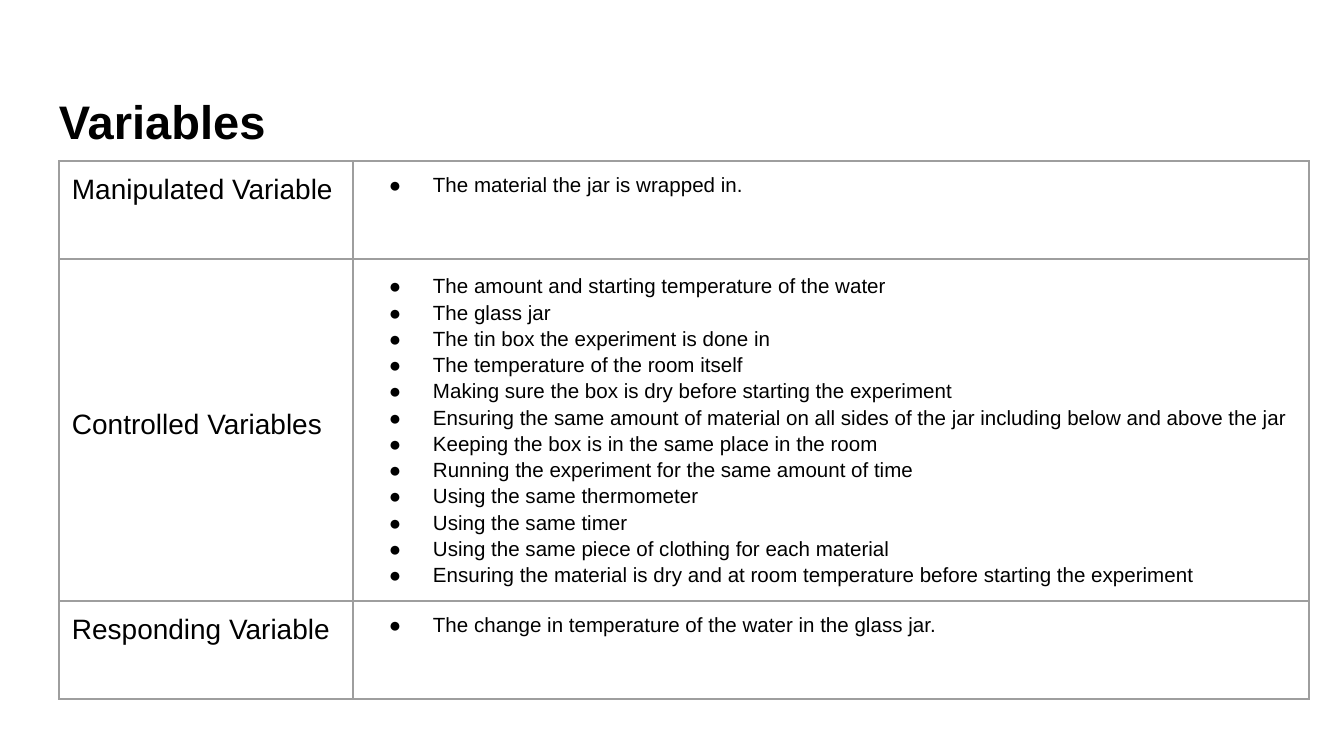
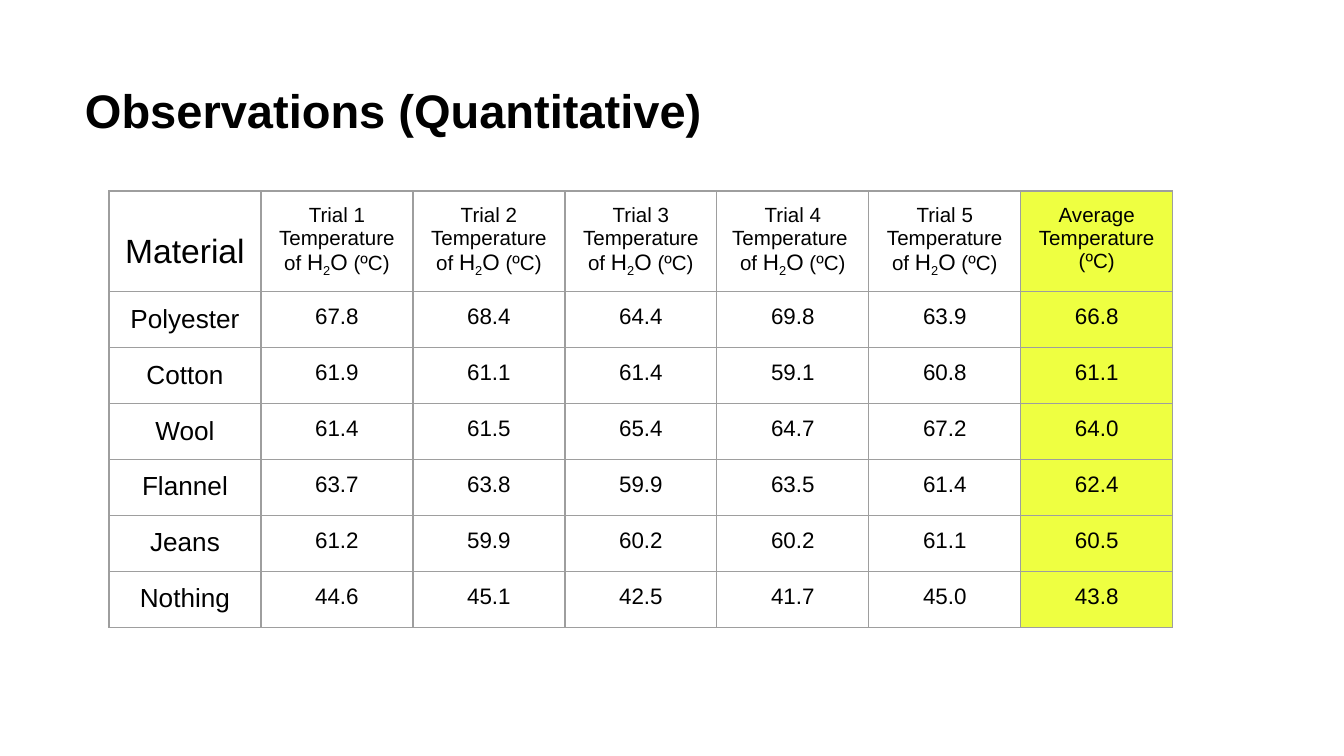
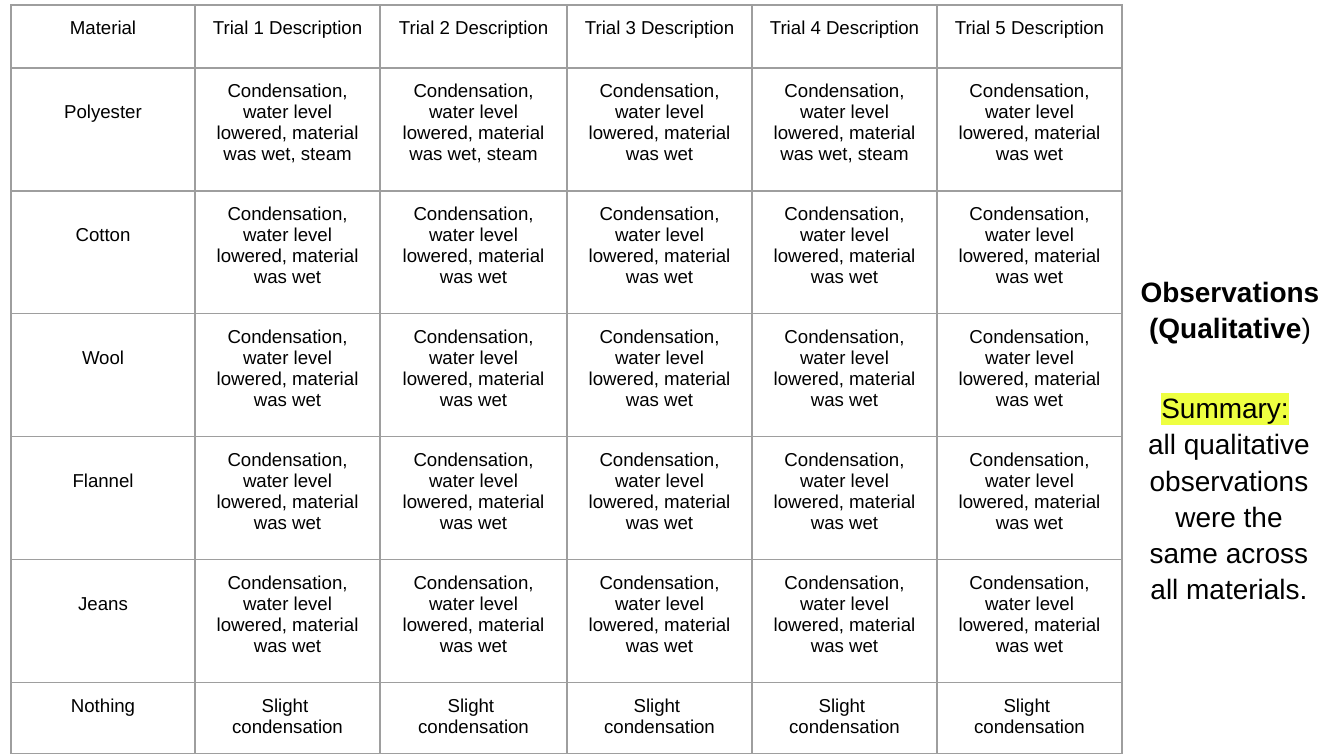
from dataclasses import dataclass
from typing import Optional, Sequence, Union

import pptx
import pptx.util
import pptx.dml.color
import pptx.enum.text
import pptx.oxml
import pptx.oxml.ns
from lxml import etree

Pt = pptx.util.Pt
RGB = pptx.dml.color.RGBColor
ALIGN = pptx.enum.text.PP_ALIGN
ANCHOR = pptx.enum.text.MSO_ANCHOR
qn = pptx.oxml.ns.qn

SLIDE_W, SLIDE_H = 1344, 756
EMU_PER_PX = 9144000 / SLIDE_W
TITLE_ONLY, BLANK = 5, 6
FONT = "Arial"
BLACK = RGB(0x00, 0x00, 0x00)
GREY = RGB(0x9E, 0x9E, 0x9E)
YELLOW = RGB(0xEE, 0xFF, 0x41)
INSET = 13
BULLET_LEFT, BULLET_HANG = 67, 44


@dataclass(frozen=True)
class Run:
    text: str
    size: Optional[float] = None
    bold: Optional[bool] = None
    sub: bool = False
    mark: Optional[RGB] = None


Para = Union[str, Sequence[Run]]


@dataclass(frozen=True)
class Cell:
    paras: Sequence[Para]
    size: float
    align: ALIGN = ALIGN.CENTER
    top: int = INSET
    fill: Optional[RGB] = None
    bullet: bool = False
    spacing: Optional[float] = None


def px(n: float) -> int:
    return round(n * EMU_PER_PX)


def add_colour(parent, tag: str, colour: RGB):
    el = etree.SubElement(parent, qn(tag))
    etree.SubElement(el, qn("a:srgbClr")).set("val", str(colour))
    return el


def add_bullet(p) -> None:
    pPr = p._p.get_or_add_pPr()
    pPr.set("marL", str(px(BULLET_LEFT)))
    pPr.set("indent", str(-px(BULLET_HANG)))
    add_colour(pPr, "a:buClr", BLACK)
    etree.SubElement(pPr, qn("a:buFont")).set("typeface", FONT)
    etree.SubElement(pPr, qn("a:buChar")).set("char", "●")


def write(tf, paras: Sequence[Para], *, size: float, bold: bool = False,
          align: ALIGN = ALIGN.LEFT, bullet: bool = False,
          spacing: Optional[float] = None) -> None:
    """Fill a text frame; a Run may override the size and weight."""
    for i, para in enumerate(paras):
        p = tf.paragraphs[0] if i == 0 else tf.add_paragraph()
        p.alignment = align
        if bullet:
            add_bullet(p)
        if spacing:
            p.line_spacing = spacing
        for run in [Run(para)] if isinstance(para, str) else para:
            r = p.add_run()
            r.text = run.text
            r.font.name = FONT
            r.font.size = Pt(run.size or size)
            r.font.bold = bold if run.bold is None else run.bold
            r.font.color.rgb = BLACK
            rPr = r.font._element
            if run.sub:
                rPr.set("baseline", "-25000")
            if run.mark is not None:
                mark = add_colour(rPr, "a:highlight", run.mark)
                rPr.find(qn("a:solidFill")).addnext(mark)


def set_insets(box, left: int = INSET, top: int = INSET) -> None:
    """Set the margins of a text frame or a table cell."""
    box.margin_left, box.margin_top = px(left), px(top)
    box.margin_right = box.margin_bottom = px(INSET)


def add_title(s, text: str, top: int, indent: int = INSET) -> None:
    sp = s.shapes.title
    sp.left, sp.top, sp.width, sp.height = px(46), px(top), px(1252), px(85)
    tf = sp.text_frame
    tf.word_wrap = True
    tf.auto_size = pptx.enum.text.MSO_AUTO_SIZE.NONE
    tf.vertical_anchor = ANCHOR.BOTTOM
    set_insets(tf, left=indent)
    write(tf, [text], size=25.2, bold=True)


def add_text(s, left: int, top: int, width: int, height: int,
             paras: Sequence[Para], **fmt) -> None:
    tf = s.shapes.add_textbox(px(left), px(top), px(width), px(height)).text_frame
    tf.word_wrap = True
    set_insets(tf)
    write(tf, paras, **fmt)


def add_borders(cell) -> None:
    tcPr = cell._tc.get_or_add_tcPr()
    for side in ("L", "R", "T", "B"):
        ln = etree.SubElement(tcPr, qn(f"a:ln{side}"))
        ln.set("w", str(Pt(0.75)))
        add_colour(ln, "a:solidFill", GREY)


def add_table(s, left: int, top: int, cols: Sequence[int], heights: Sequence[int],
              rows: Sequence[Sequence[Cell]]) -> None:
    table = s.shapes.add_table(len(rows), len(cols), px(left), px(top),
                               px(sum(cols)), px(sum(heights))).table
    table.first_row = table.horz_banding = False
    for col, width in zip(table.columns, cols):
        col.width = px(width)
    for row, height, specs in zip(table.rows, heights, rows):
        row.height = px(height)
        for cell, spec in zip(row.cells, specs):
            set_insets(cell, top=spec.top)
            cell.vertical_anchor = ANCHOR.TOP
            add_borders(cell)
            if spec.fill is None:
                cell.fill.background()
            else:
                cell.fill.solid()
                cell.fill.fore_color.rgb = spec.fill
            write(cell.text_frame, spec.paras, size=spec.size, align=spec.align,
                  bullet=spec.bullet, spacing=spec.spacing)


CONTROLLED = [
    "The amount and starting temperature of the water",
    "The glass jar",
    "The tin box the experiment is done in",
    "The temperature of the room itself",
    "Making sure the box is dry before starting the experiment",
    "Ensuring the same amount of material on all sides of the jar including below and above the jar",
    "Keeping the box is in the same place in the room",
    "Running the experiment for the same amount of time",
    "Using the same thermometer",
    "Using the same timer",
    "Using the same piece of clothing for each material",
    "Ensuring the material is dry and at room temperature before starting the experiment",
]

TRIAL_HEADS = [
    ["Trial 1 Temperature of "],
    ["Trial 2 Temperature of "],
    ["Trial 3 Temperature of "],
    ["Trial 4 Temperature ", "of "],
    ["Trial 5", "Temperature of "],
]
WATER = [Run("H", 12), Run("2", 12, sub=True), Run("O", 12), Run(" (ºC)")]

# Five trials, then their average
TEMPERATURES = {
    "Polyester": ["67.8", "68.4", "64.4", "69.8", "63.9", "66.8"],
    "Cotton": ["61.9", "61.1", "61.4", "59.1", "60.8", "61.1"],
    "Wool": ["61.4", "61.5", "65.4", "64.7", "67.2", "64.0"],
    "Flannel": ["63.7", "63.8", "59.9", "63.5", "61.4", "62.4"],
    "Jeans": ["61.2", "59.9", "60.2", "60.2", "61.1", "60.5"],
    "Nothing": ["44.6", "45.1", "42.5", "41.7", "45.0", "43.8"],
}

TRIALS = range(1, 6)
WET = "Condensation, water level lowered, material was wet"
STEAM_TRIALS = {("Polyester", 1), ("Polyester", 2), ("Polyester", 4)}


def variables_slide(prs) -> None:
    def label(text: str, top: int = INSET) -> Cell:
        return Cell([text], 15, ALIGN.LEFT, top)

    def bullets(items: Sequence[str], spacing: Optional[float] = None) -> Cell:
        return Cell(items, 11, ALIGN.LEFT, bullet=True, spacing=spacing)

    s = prs.slides.add_slide(prs.slide_layouts[TITLE_ONLY])
    add_title(s, "Variables", 77)
    add_table(s, 59, 161, [294, 956], [98, 342, 98], [
        [label("Manipulated Variable"), bullets(["The material the jar is wrapped in."])],
        [label("Controlled Variables", top=150), bullets(CONTROLLED, 1.15)],
        [label("Responding Variable"),
         bullets(["The change in temperature of the water in the glass jar."])],
    ])


def quantitative_slide(prs) -> None:
    s = prs.slides.add_slide(prs.slide_layouts[TITLE_ONLY])
    add_title(s, "Observations (Quantitative)", 66, indent=39)
    rows = [[
        Cell(["Material"], 18, top=42),
        *(Cell([*first, [Run(last), *WATER]], 11) for *first, last in TRIAL_HEADS),
        Cell(["Average Temperature", "(ºC)"], 11, fill=YELLOW),
    ]]
    for material, (*trials, average) in TEMPERATURES.items():
        rows.append([Cell([material], 14), *(Cell([t], 12) for t in trials),
                     Cell([average], 12, fill=YELLOW)])
    add_table(s, 109, 191, [152] * 7, [100] + [56] * 6, rows)


def describe(material: str, trial: int) -> Cell:
    if material == "Nothing":
        return Cell(["Slight ", "condensation"], 10)
    return Cell([WET + (", steam" if (material, trial) in STEAM_TRIALS else "")], 10)


def qualitative_slide(prs) -> None:
    s = prs.slides.add_slide(prs.slide_layouts[BLANK])
    rows = [[Cell(["Material"], 10),
             *(Cell([f"Trial {n} Description"], 10) for n in TRIALS)]]
    for material in TEMPERATURES:
        top = INSET if material == "Nothing" else 34
        rows.append([Cell([material], 10, top=top),
                     *(describe(material, n) for n in TRIALS)])
    add_table(s, 11, 5, [184, 185, 187, 185, 185, 185], [63] + [123] * 5 + [71], rows)

    fmt = dict(size=15, align=ALIGN.CENTER, spacing=1.08)
    add_text(s, 1125, 259, 210, 155,
             [[Run("Observations (Qualitative", bold=True), Run(")")]], **fmt)
    add_text(s, 1134, 375, 190, 215, [
        [Run("Summary:", mark=YELLOW), Run(" ")],
        "all qualitative observations were the same across all materials. ",
    ], **fmt)


def main() -> None:
    prs = pptx.Presentation()
    prs.slide_width, prs.slide_height = px(SLIDE_W), px(SLIDE_H)
    variables_slide(prs)
    quantitative_slide(prs)
    qualitative_slide(prs)
    prs.save("out.pptx")


if __name__ == "__main__":
    main()
